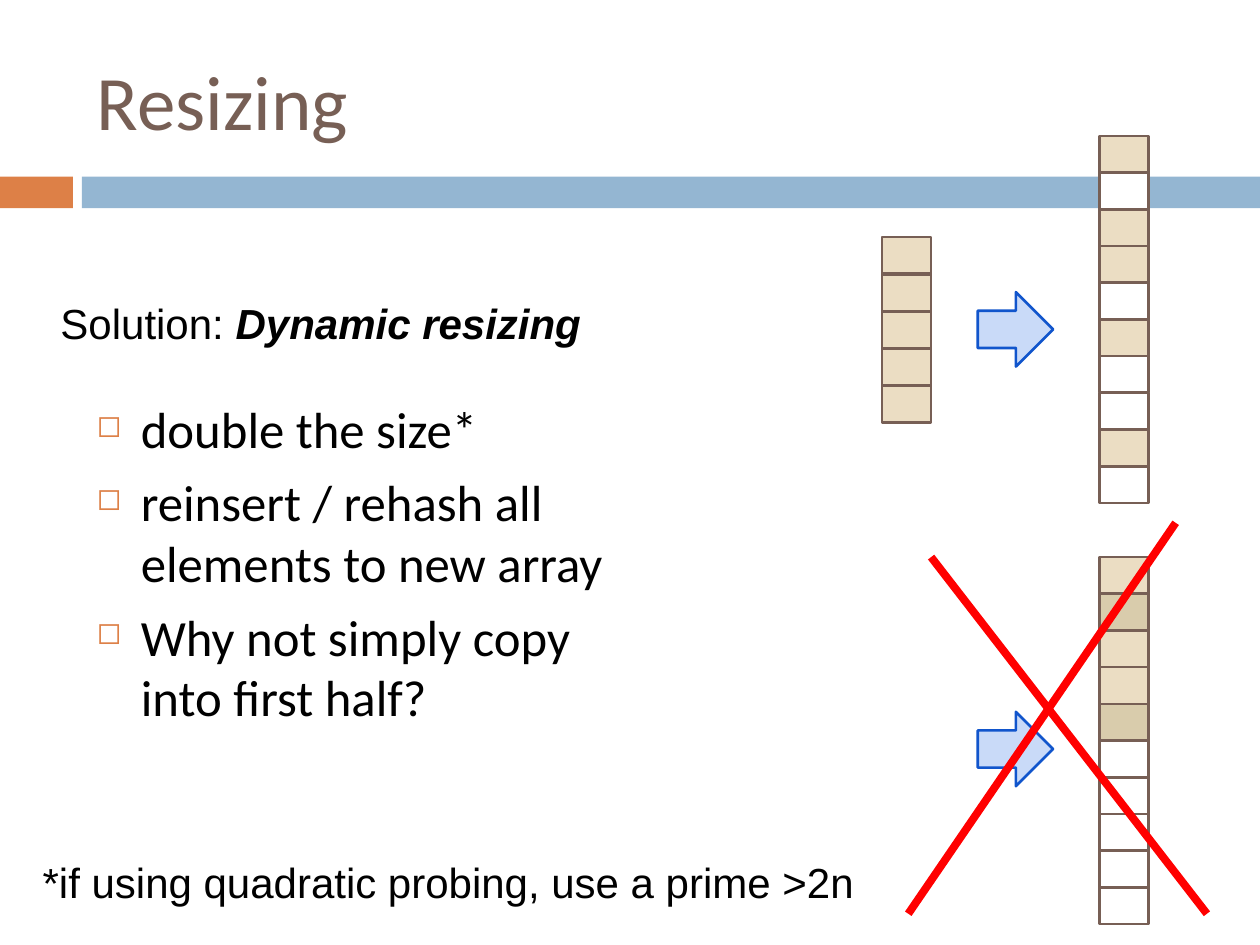
from lxml import etree
from pptx import Presentation
from pptx.dml.color import RGBColor
from pptx.enum.shapes import MSO_CONNECTOR, MSO_SHAPE
from pptx.enum.text import MSO_ANCHOR, MSO_AUTO_SIZE, PP_ALIGN
from pptx.oxml.ns import qn
from pptx.util import Cm, Pt

RECT, ARROW = MSO_SHAPE.RECTANGLE, MSO_SHAPE.RIGHT_ARROW
STRAIGHT = MSO_CONNECTOR.STRAIGHT
LEFT, TOP, MIDDLE = PP_ALIGN.LEFT, MSO_ANCHOR.TOP, MSO_ANCHOR.MIDDLE
NO_AUTOFIT = MSO_AUTO_SIZE.NONE

COLORS = {
    "text": "000000", "brown": "775F55", "orange": "DD8047", "band": "94B6D2",
    "full": "EBDDC3", "moved": "D9CCAC", "empty": "FFFFFF",
    "arrow": "C9DAF8", "arrow_edge": "1155CC", "cross": "FF0000",
}
TITLE = "Resizing"
SOLUTION = [("Solution: ", False), ("Dynamic resizing", True)]
BULLETS = [
    "double the size*",
    "reinsert / rehash all elements to new array",
    "Why not simply copy into first half?",
]
FOOTNOTE = "*if using quadratic probing, use a prime >2n"

BARS = [(0, 1.47, "orange"), (1.65, 23.75, "band")]
CELL_W, CELL_H = 0.99, 0.74
CELL_KINDS = {"F": "full", "M": "moved", "E": "empty"}
ARRAYS = [
    (17.78, 4.78, 0.75, "FFFFF"),
    (22.17, 2.74, 0.74, "FEFFEFEEFE"),
    (22.17, 11.23, 0.74, "FMFFMEEEEE"),
]
ARROW_TOPS = [5.89, 14.35]
CROSS = [(18.77, 11.23, 24.33, 18.42), (18.31, 18.42, 23.7, 10.54)]


def rgb(name):
    return RGBColor.from_string(COLORS[name])


def add_box(s, kind, box, fill, edge=None):
    sp = s.shapes.add_shape(kind, *map(Cm, box))
    sp.shadow.inherit = False
    sp.fill.solid()
    sp.fill.fore_color.rgb = rgb(fill)
    if edge:
        sp.line.color.rgb = rgb(edge)
        sp.line.width = Pt(1.5)
    else:
        sp.line.fill.background()


def add_run(p, text, size, font, color="text", strong=False):
    r = p.add_run()
    r.text = text
    r.font.size, r.font.name = Pt(size), font
    r.font.color.rgb = rgb(color)
    if strong:
        r.font.bold = r.font.italic = True


def add_text(s, box, wrap=True):
    tf = s.shapes.add_textbox(*map(Cm, box)).text_frame
    tf.word_wrap = wrap
    tf.vertical_anchor = TOP
    return tf


def add_bullet(p):
    p.space_before = Pt(7)
    pPr = p._p.get_or_add_pPr()
    pPr.set("marL", str(Cm(0.89)))
    pPr.set("indent", str(-Cm(0.89)))
    color = etree.SubElement(pPr, qn("a:buClr"))
    etree.SubElement(color, qn("a:srgbClr"), val=COLORS["orange"])
    etree.SubElement(pPr, qn("a:buSzPct"), val="60000")
    etree.SubElement(pPr, qn("a:buChar"), char="◻")


def add_line(s, ends):
    line = s.shapes.add_connector(STRAIGHT, *map(Cm, ends))
    line.line.color.rgb = rgb("cross")
    line.line.width = Pt(4.5)
    etree.SubElement(line._element.spPr, qn("a:effectLst"))


def main():
    prs = Presentation()
    prs.slide_width, prs.slide_height = Cm(25.4), Cm(19.05)
    s = prs.slides.add_slide(prs.slide_layouts[5])

    title = s.shapes.title
    title.left, title.top, title.width, title.height = map(Cm, (1.7, 0.64, 22.66, 2.74))
    tf = title.text_frame
    tf.auto_size, tf.vertical_anchor = NO_AUTOFIT, MIDDLE
    p = tf.paragraphs[0]
    p.alignment = LEFT
    add_run(p, TITLE, 44, "Calibri", "brown")

    for left, width, color in BARS:
        add_box(s, RECT, (left, 3.56, width, 0.64), color)

    tf = add_text(s, (1.7, 7.9, 10.8, 9.19))
    for i, text in enumerate(BULLETS):
        p = tf.add_paragraph() if i else tf.paragraphs[0]
        add_bullet(p)
        add_run(p, text, 29, "Calibri")

    tf = add_text(s, (0.97, 5.74, 19.99, 2.16))
    tf.margin_top = tf.margin_bottom = Cm(0.25)
    for text, strong in SOLUTION:
        add_run(tf.paragraphs[0], text, 24, "Arial", strong=strong)

    tf = add_text(s, (0.61, 17.15, 17.27, 1.27), wrap=False)
    add_run(tf.paragraphs[0], FOOTNOTE, 24, "Arial")

    for left, top, pitch, cells in ARRAYS:
        for i, kind in enumerate(cells):
            box = (left, top + i * pitch, CELL_W, CELL_H)
            add_box(s, RECT, box, CELL_KINDS[kind], "brown")

    for top in ARROW_TOPS:
        add_box(s, ARROW, (19.71, top, 1.52, 1.5), "arrow", "arrow_edge")

    for ends in CROSS:
        add_line(s, ends)

    prs.save("out.pptx")


if __name__ == "__main__":
    main()
